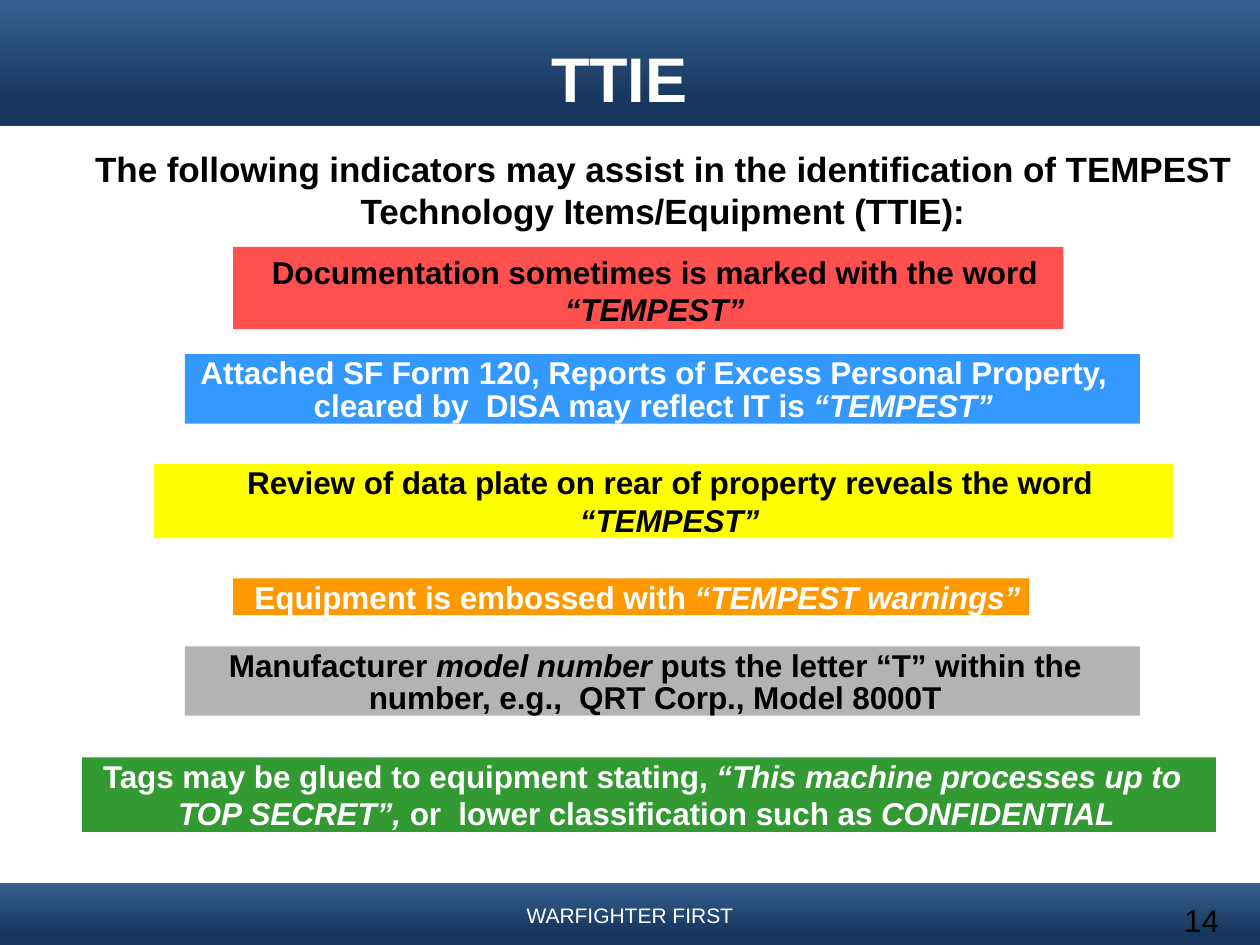
from pptx import Presentation
from pptx.dml.color import RGBColor
from pptx.enum.shapes import MSO_SHAPE as Shape
from pptx.enum.text import MSO_ANCHOR as Anchor, PP_ALIGN as Align
from pptx.util import Cm, Pt

NAVY = RGBColor(0x17, 0x37, 0x5E)
STEEL = RGBColor(0x37, 0x60, 0x92)
WHITE = RGBColor(0xFF, 0xFF, 0xFF)
BLACK = RGBColor(0x00, 0x00, 0x00)
RED = RGBColor(0xFF, 0x50, 0x50)
BLUE = RGBColor(0x33, 0x99, 0xFF)
YELLOW = RGBColor(0xFF, 0xFF, 0x00)
ORANGE = RGBColor(0xFF, 0x99, 0x00)
GRAY = RGBColor(0xB3, 0xB3, 0xB3)
GREEN = RGBColor(0x33, 0x99, 0x33)

SLIDE_W, SLIDE_H = 25.4, 19.05
LEFT_INSET = 0.25

# Paragraphs are lists of spans; text between asterisks is italic
HEADING = ("The following indicators may assist in the identification of "
           "TEMPEST Technology Items/Equipment (TTIE):")

# Indicators: place (cm), fill, text colour, line pitch (pt),
# top and right insets (cm), paragraphs
INDICATORS = [
    ((4.7, 4.98, 16.74, 1.65), RED, BLACK, 21.1, 0.14, 0,
     ["Documentation sometimes is marked with the word *“TEMPEST”*"]),
    ((3.73, 7.14, 19.25, 1.4), BLUE, WHITE, 18.4, 0.1, 0.62,
     ["Attached SF Form 120, Reports of Excess Personal Property, "
      "cleared by  DISA may reflect IT is *“TEMPEST”*"]),
    ((3.1, 9.35, 20.55, 1.5), YELLOW, BLACK, 21.4, 0, 0,
     ["Review of data plate on rear of property reveals the word "
      "*“TEMPEST”*"]),
    ((4.7, 11.66, 16.05, 0.74), ORANGE, WHITE, 21.4, 0, 0,
     ["Equipment is embossed with *“TEMPEST warnings”*"]),
    ((3.73, 13.03, 19.25, 1.4), GRAY, BLACK, 18.4, 0.1, 0.55,
     ["Manufacturer *model number* puts the letter “T” within the "
      "number, e.g.,  QRT Corp., Model 8000T"]),
    ((1.65, 15.27, 22.86, 1.5), GREEN, WHITE, 18.4, 0.1, 0.35,
     ["Tags may be glued to equipment stating, "
      "*“This machine processes up to *",
      "*TOP SECRET”, *or  lower classification such as *CONFIDENTIAL*"]),
]


def add_bar(page, place, color=None):
    bar = page.shapes.add_shape(Shape.RECTANGLE, *map(Cm, place))
    bar.shadow.inherit = False
    bar.line.fill.background()
    if color is None:
        bar.fill.gradient()
        bar.fill.gradient_angle = 90
        stops = zip(bar.fill.gradient_stops, ((0.2, NAVY), (1, STEEL)))
        for stop, (position, shade) in stops:
            stop.position = position
            stop.color.rgb = shade
    else:
        bar.fill.solid()
        bar.fill.fore_color.rgb = color
    return bar


def write(box, paragraphs, size, color, bold=True, align=Align.CENTER,
          insets=None, pitch=None):
    frame = box.text_frame
    frame.word_wrap = True
    frame.vertical_anchor = Anchor.TOP
    if insets:
        (frame.margin_left, frame.margin_top,
         frame.margin_right, frame.margin_bottom) = map(Cm, insets)
    for index, text in enumerate(paragraphs):
        para = frame.add_paragraph() if index else frame.paragraphs[0]
        para.alignment = align
        if index:
            para.space_before = Pt(3)
        if pitch:
            para.line_spacing = Pt(pitch)
        para.font.name = "Arial"
        para.font.size = Pt(size)
        para.font.bold = bold
        para.font.color.rgb = color
        for part, words in enumerate(text.split("*")):
            if words:
                span = para.add_run()
                span.text = words
                if part % 2:
                    span.font.italic = True
                if bold:  # slightly tightened letter spacing
                    span.font._element.set("spc", "-5")


def add_text(page, place, text, size, color, **style):
    box = page.shapes.add_textbox(*map(Cm, place))
    write(box, [text], size, color, **style)


def main():
    deck = Presentation()
    deck.slide_width, deck.slide_height = Cm(SLIDE_W), Cm(SLIDE_H)
    page = deck.slides.add_slide(deck.slide_layouts[6])

    # Header and footer bands
    add_bar(page, (0, 17.8, SLIDE_W, SLIDE_H - 17.8))
    add_bar(page, (0, 0, SLIDE_W, 2.54))
    add_text(page, (0, 18.06, SLIDE_W, 0.77), "WARFIGHTER FIRST", 12, WHITE,
             bold=False)
    add_text(page, (23.62, 18.03, 1.42, 1.02), "14", 18, BLACK,
             bold=False, align=Align.LEFT)

    # Title and introduction
    add_text(page, (10.77, 0.64, 3.43, 1.57), "TTIE", 36, WHITE,
             insets=(0, 0.15, 0, 0))
    add_text(page, (1.65, 2.9, 23.42, 1.75), HEADING, 20, BLACK,
             insets=(0, 0.08, 0, 0), pitch=24)

    # Indicator bars
    for place, fill, color, pitch, top, right, paragraphs in INDICATORS:
        bar = add_bar(page, place, fill)
        write(bar, paragraphs, 18, color, pitch=pitch,
              insets=(LEFT_INSET, top, right, 0))

    deck.save("out.pptx")


if __name__ == "__main__":
    main()
